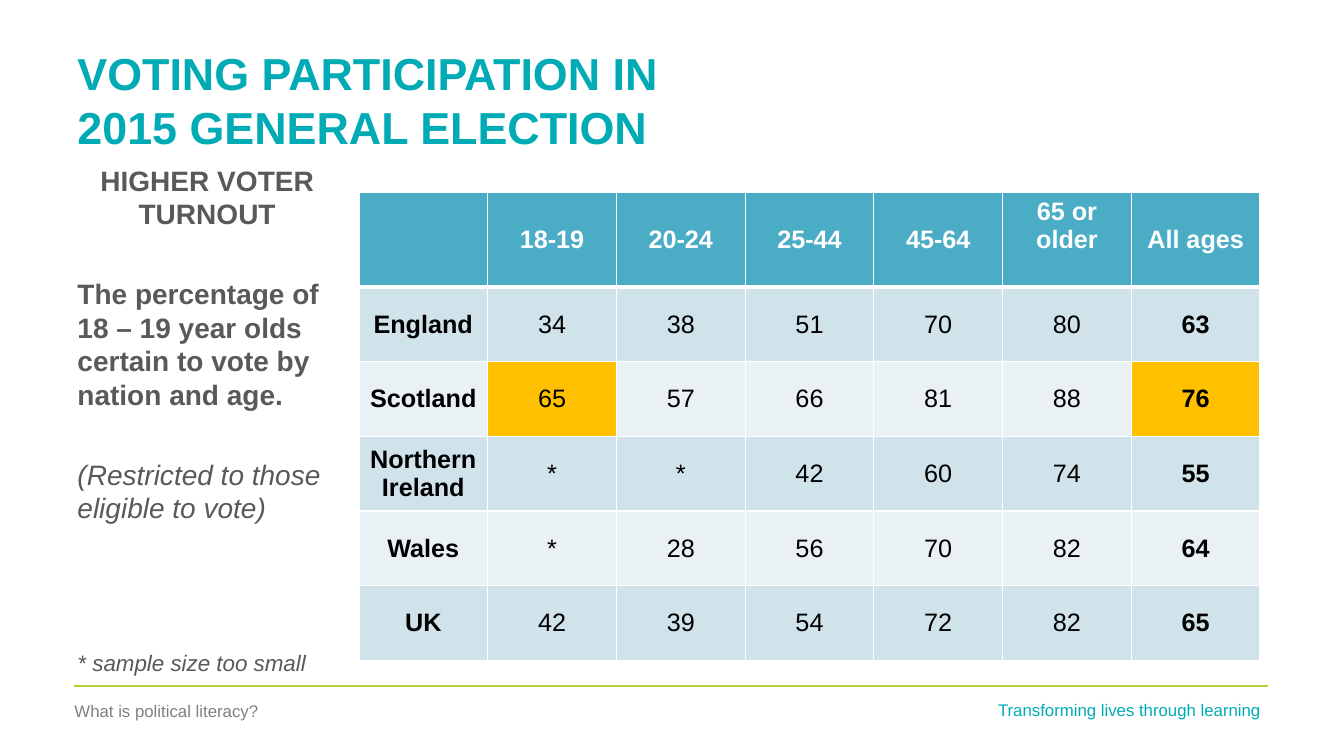
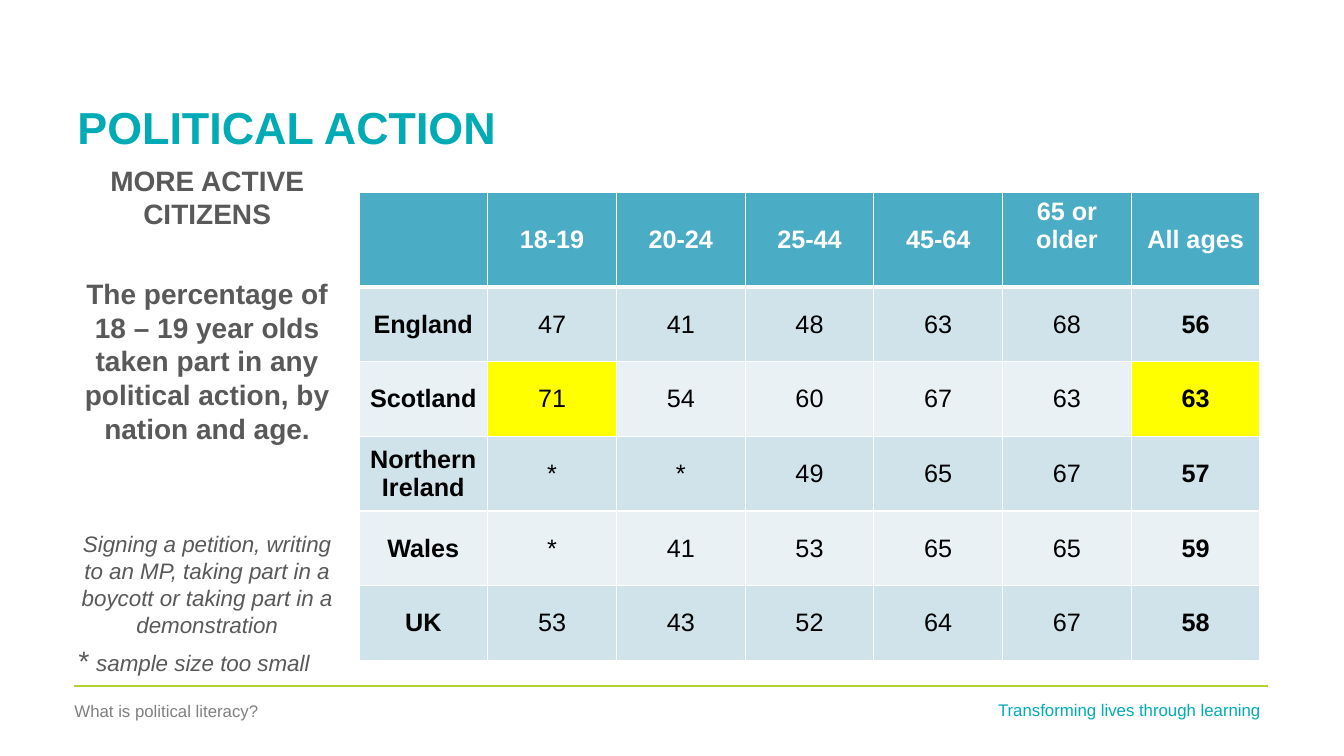
"""Build two slides on voting and political action by nation and age."""
from lxml.etree import SubElement
from pptx import Presentation
from pptx.dml.color import RGBColor
from pptx.enum.shapes import MSO_CONNECTOR
from pptx.enum.text import MSO_ANCHOR, PP_ALIGN
from pptx.oxml.ns import qn
from pptx.util import Inches, Pt

COLOURS = {
    "teal": "00ABB5", "lime": "B3D236", "footer": "808080", "body": "595959",
    "header": "4BACC6", "band": "D0E3EA", "pale": "E9F1F5",
    "white": "FFFFFF", "black": "000000", "amber": "FFC000", "yellow": "FFFF00",
}
STYLES = {
    "title": {"size": Pt(32), "bold": True, "color": "teal"},
    "strong": {"size": Pt(20), "bold": True, "color": "body"},
    "remark": {"size": Pt(20), "italic": True, "color": "body"},
    "small": {"size": Pt(16), "italic": True, "color": "body"},
    "footer": {"size": Pt(12), "color": "footer"},
    "motto": {"size": Pt(12), "color": "teal"},
    "heading": {"size": Pt(18), "bold": True, "color": "white"},
    "total": {"size": Pt(18), "bold": True, "color": "black"},
    "value": {"size": Pt(18), "bold": False, "color": "black"},
}
LEFT, CENTRE = PP_ALIGN.LEFT, PP_ALIGN.CENTER
AGES = ["", "18-19", "20-24", "25-44", "45-64", "65 or older", "All ages"]
HIGHLIGHTS = [(2, 1), (2, 6)]

SLIDES = [
    {
        "title": "VOTING PARTICIPATION IN 2015 GENERAL ELECTION",
        "title_width": 6.97,
        "highlight": "amber",
        "notes": [
            (CENTRE, 0, [("HIGHER VOTER TURNOUT", "strong")]),
            (LEFT, 33, [("The percentage of 18 – 19 year olds certain to vote "
                         "by nation and age.", "strong")]),
            (LEFT, 33, [("(Restricted to those eligible to vote)", "remark")]),
            (LEFT, 89, [("* sample size too small", "small")]),
        ],
        "nations": [
            ["England", "34", "38", "51", "70", "80", "63"],
            ["Scotland", "65", "57", "66", "81", "88", "76"],
            ["Northern Ireland", "*", "*", "42", "60", "74", "55"],
            ["Wales", "*", "28", "56", "70", "82", "64"],
            ["UK", "42", "39", "54", "72", "82", "65"],
        ],
    },
    {
        "title": "POLITICAL ACTION",
        "title_width": 4.39,
        "highlight": "yellow",
        "notes": [
            (CENTRE, 0, [("MORE ACTIVE CITIZENS", "strong")]),
            (CENTRE, 33, [("The percentage of 18 – 19 year olds taken part in any "
                           "political action, by nation and age.", "strong")]),
            (CENTRE, 61, [("Signing a petition, writing to an MP, taking part in a "
                           "boycott or taking part in a demonstration", "small")]),
            (LEFT, 4, [("* ", "remark"), ("sample size too small", "small")]),
        ],
        "nations": [
            ["England", "47", "41", "48", "63", "68", "56"],
            ["Scotland", "71", "54", "60", "67", "63", "63"],
            ["Northern Ireland", "*", "*", "49", "65", "67", "57"],
            ["Wales", "*", "41", "53", "65", "65", "59"],
            ["UK", "53", "43", "52", "64", "67", "58"],
        ],
    },
]


def rgb(name):
    """Return the named colour."""
    return RGBColor.from_string(COLOURS[name])


def add_run(paragraph, words, style):
    """Append words to a paragraph in a named style."""
    phrase = paragraph.add_run()
    phrase.text = words
    font = phrase.font
    font.name = "Arial"
    for key, setting in STYLES[style].items():
        if key == "color":
            font.color.rgb = rgb(setting)
        else:
            setattr(font, key, setting)


def add_text(slide, place, paragraphs, anchor=MSO_ANCHOR.TOP):
    """Place a wrapping text box holding (alignment, gap, runs) paragraphs."""
    frame = slide.shapes.add_textbox(*map(Inches, place)).text_frame
    frame.word_wrap = True
    frame.vertical_anchor = anchor
    for index, (alignment, gap, runs) in enumerate(paragraphs):
        paragraph = frame.add_paragraph() if index else frame.paragraphs[0]
        paragraph.alignment = alignment
        if gap:
            paragraph.space_before = Pt(gap)
        for words, style in runs:
            add_run(paragraph, words, style)


def add_footer(slide):
    """Draw the rule and the two footer texts."""
    rule = slide.shapes.add_connector(
        MSO_CONNECTOR.STRAIGHT, *map(Inches, (0.73, 6.81, 12.58, 6.81)))
    rule.line.color.rgb = rgb("lime")
    rule.line.width = Pt(1.5)
    SubElement(rule.element.spPr, qn("a:effectLst"))
    add_text(slide, (0.64, 6.9, 3.01, 0.3),
             [(LEFT, 0, [("What is political literacy?", "footer")])])
    add_text(slide, (9.8, 6.89, 3.01, 0.3),
             [(LEFT, 0, [("Transforming lives through learning", "motto")])])


def set_borders(cell, widths):
    """Give a cell white borders, with widths in points by side."""
    properties = cell.fill._xPr
    for index, (side, width) in enumerate(widths.items()):
        border = properties.makeelement(qn(f"a:ln{side}"), {"w": str(Pt(width))})
        fill = SubElement(border, qn("a:solidFill"))
        SubElement(fill, qn("a:srgbClr"), val=COLOURS["white"])
        properties.insert(index, border)


def fill_cell(cell, words, style, fill):
    """Write centred words into a filled cell."""
    cell.vertical_anchor = MSO_ANCHOR.MIDDLE
    cell.fill.solid()
    cell.fill.fore_color.rgb = rgb(fill)
    paragraph = cell.text_frame.paragraphs[0]
    paragraph.alignment = CENTRE
    if words:
        add_run(paragraph, words, style)


def add_age_table(slide, nations, highlight):
    """Add the table of percentages by nation and age."""
    rows = [AGES, *nations]
    table = slide.shapes.add_table(
        len(rows), len(AGES), *map(Inches, (3.56, 1.91, 8.94, 4.63))).table
    table.first_row = table.horz_banding = False
    for r, row in enumerate(rows):
        table.rows[r].height = Inches(0.74 if r else 0.93)
        for c, words in enumerate(row):
            style = "value" if 0 < c < len(AGES) - 1 else "total"
            fill = "band" if r % 2 else "pale"
            if r == 0:
                style, fill = "heading", "header"
            elif (r, c) in HIGHLIGHTS:
                fill = highlight
            cell = table.cell(r, c)
            fill_cell(cell, words, style, fill)
            set_borders(cell, {"L": 1, "R": 1, "T": 3 if r == 1 else 1,
                               "B": 1 if r else 3})
    older = table.cell(0, AGES.index("65 or older"))
    older.margin_top, older.margin_bottom = Inches(0.03), Inches(0.31)


def add_survey_slide(deck, content):
    """Add one slide with title, side notes, table and footer."""
    slide = deck.slides.add_slide(deck.slide_layouts[6])
    add_footer(slide)
    add_text(slide, (0.67, 0.3, content["title_width"], 1.27),
             [(LEFT, 0, [(content["title"], "title")])], MSO_ANCHOR.BOTTOM)
    add_age_table(slide, content["nations"], content["highlight"])
    add_text(slide, (0.67, 1.57, 2.77, 5.13), content["notes"])


def main():
    """Build and save the deck."""
    deck = Presentation()
    deck.slide_width, deck.slide_height = Inches(13.33), Inches(7.5)
    for content in SLIDES:
        add_survey_slide(deck, content)
    deck.save("out.pptx")


if __name__ == "__main__":
    main()
